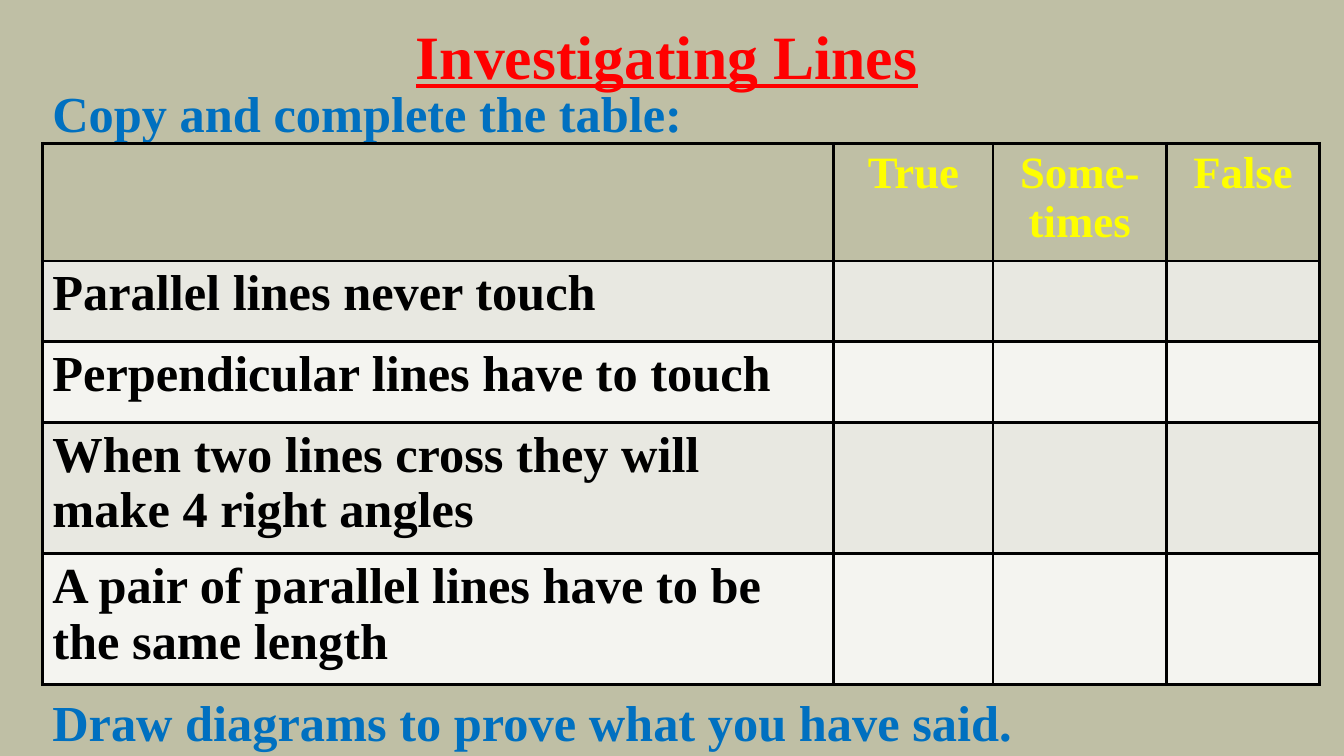
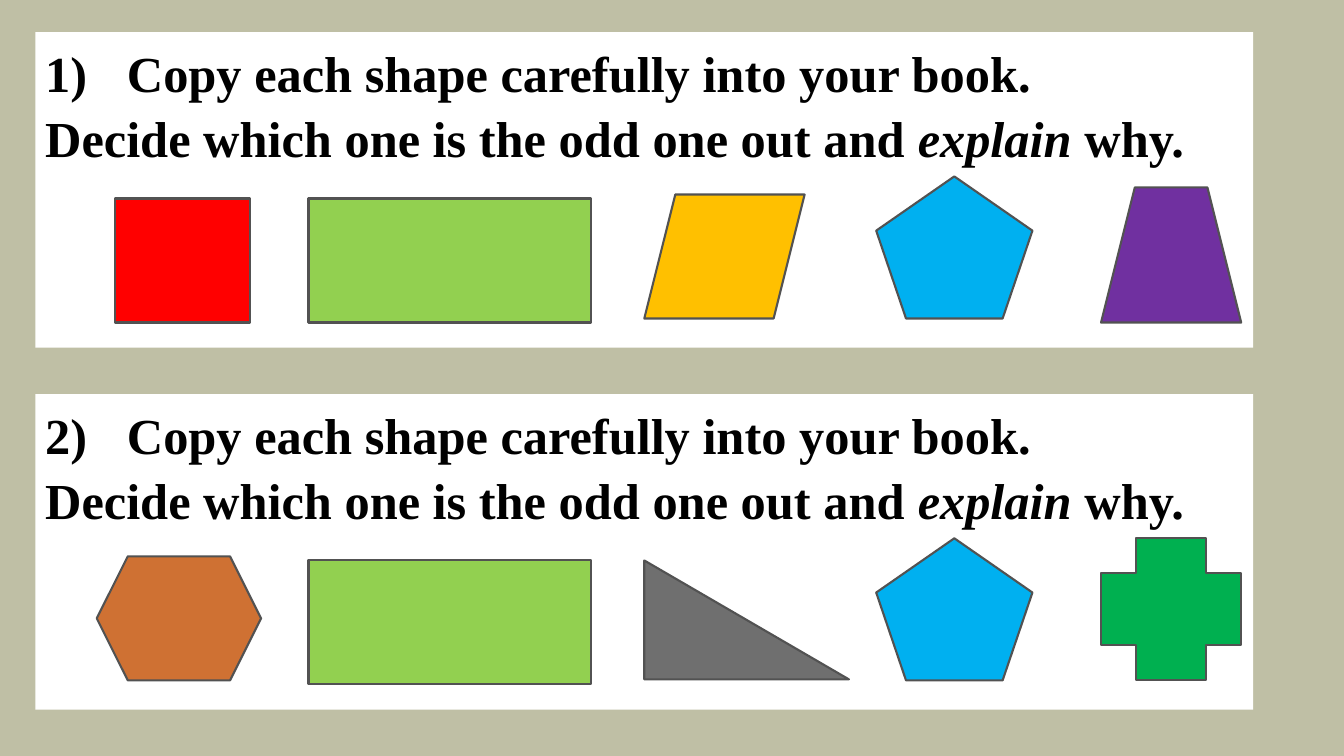
from dataclasses import dataclass
from typing import Any

import pptx
import pptx.dml.color
import pptx.enum.shapes
import pptx.enum.text
import pptx.oxml.ns
import pptx.oxml.xmlchemy
import pptx.util
from lxml import etree

Inches = pptx.util.Inches
Pt = pptx.util.Pt
Shape = pptx.enum.shapes.MSO_SHAPE
Align = pptx.enum.text.PP_ALIGN
qn = pptx.oxml.ns.qn


def rgb(value: str) -> pptx.dml.color.RGBColor:
    return pptx.dml.color.RGBColor.from_string(value)


# Shared colours and type sizes
@dataclass(frozen=True)
class Theme:
    font: str = "Times New Roman"
    background: str = "BFBFA5"
    title: str = "FF0000"
    instruction: str = "0070C0"
    heading: str = "FFFF00"
    text: str = "000000"
    panel: str = "FFFFFF"
    outline: str = "525252"
    grid: str = "000000"
    row_fills: tuple[str, str] = ("E8E8E1", "F4F4F0")
    title_size: int = 44
    body_size: int = 36
    heading_size: int = 32
    outline_width: float = 1.5
    grid_width: float = 2.25
    line_spacing: float = 1.08


THEME = Theme()


@dataclass(frozen=True)
class Box:
    left: float
    top: float
    width: float
    height: float

    def lengths(self) -> list[pptx.util.Length]:
        return [Inches(v) for v in (self.left, self.top, self.width, self.height)]


@dataclass(frozen=True)
class Figure:
    kind: Any
    box: Box  # top is measured from the top of its panel
    fill: str


@dataclass(frozen=True)
class Question:
    number: int
    top: float
    figures: tuple[Figure, ...]


# Slide 1 content
COLUMNS = (7.85, 1.58, 1.72, 1.52)
ROWS = (1.17, 0.8, 0.8, 1.3, 1.3)
HEADINGS = ("", "True", "Some-times", "False")
STATEMENTS = (
    "Parallel lines never touch",
    "Perpendicular lines have to touch",
    "When two lines cross they will make 4 right angles",
    "A pair of parallel lines have to be the same length",
)

# Slide 2 content
RECTANGLE = Figure(Shape.RECTANGLE, Box(3.06, 1.65, 2.8, 1.23), "92D050")
PENTAGON = Figure(Shape.REGULAR_PENTAGON, Box(8.69, 1.43, 1.55, 1.41), "00B0F0")
QUESTIONS = (
    Question(1, 0.32, (
        Figure(Shape.RECTANGLE, Box(1.14, 1.65, 1.34, 1.23), "FF0000"),
        RECTANGLE,
        Figure(Shape.PARALLELOGRAM, Box(6.39, 1.61, 1.59, 1.23), "FFC000"),
        PENTAGON,
        Figure(Shape.TRAPEZOID, Box(10.92, 1.54, 1.39, 1.34), "7030A0"),
    )),
    Question(2, 3.91, (
        Figure(Shape.HEXAGON, Box(0.96, 1.61, 1.63, 1.23), "CF7133"),
        RECTANGLE,
        Figure(Shape.RIGHT_TRIANGLE, Box(6.39, 1.65, 2.03, 1.18), "6F6F6F"),
        PENTAGON,
        Figure(Shape.CROSS, Box(10.92, 1.43, 1.39, 1.41), "00B050"),
    )),
)


def add_run(p: Any, text: str, size: int, color: str, **extra: bool) -> None:
    r = p.add_run()
    r.text = text
    formats = {"name": THEME.font, "size": Pt(size), "bold": True, **extra}
    for name, value in formats.items():
        setattr(r.font, name, value)
    r.font.color.rgb = rgb(color)


def add_text(s: Any, box: Box, text: str, size: int, color: str,
             align: Any = Align.LEFT, **extra: bool) -> None:
    tf = s.shapes.add_textbox(*box.lengths()).text_frame
    tf.word_wrap = True
    p = tf.paragraphs[0]
    p.alignment = align
    p.line_spacing = THEME.line_spacing
    add_run(p, text, size, color, **extra)


def add_borders(cell: Any) -> None:
    tc_pr = cell._tc.get_or_add_tcPr()
    for i, side in enumerate(("lnL", "lnR", "lnT", "lnB")):
        ln = etree.Element(qn(f"a:{side}"), w=str(Pt(THEME.grid_width)))
        fill = etree.SubElement(ln, qn("a:solidFill"))
        etree.SubElement(fill, qn("a:srgbClr"), val=THEME.grid)
        tc_pr.insert(i, ln)


def add_true_false_table(s: Any) -> None:
    box = Box(0.42, 1.42, sum(COLUMNS), sum(ROWS))
    table = s.shapes.add_table(len(ROWS), len(COLUMNS), *box.lengths()).table
    table.first_row = table.horz_banding = False
    for column, width in zip(table.columns, COLUMNS):
        column.width = Inches(width)
    for row, height in zip(table.rows, ROWS):
        row.height = Inches(height)

    blanks = ("",) * (len(COLUMNS) - 1)
    contents = (HEADINGS, *((text, *blanks) for text in STATEMENTS))
    for i, texts in enumerate(contents):
        header = i == 0
        for j, text in enumerate(texts):
            cell = table.cell(i, j)
            cell.fill.solid()
            cell.fill.fore_color.rgb = rgb(
                THEME.background if header else THEME.row_fills[(i - 1) % 2])
            add_borders(cell)
            if text:
                p = cell.text_frame.paragraphs[0]
                p.alignment = Align.CENTER if header else Align.LEFT
                add_run(p, text,
                        THEME.heading_size if header else THEME.body_size,
                        THEME.heading if header else THEME.text)


def add_filled(s: Any, kind: Any, box: Box, fill: str, outlined: bool = True) -> Any:
    sp = s.shapes.add_shape(kind, *box.lengths())
    sp.shadow.inherit = False
    sp.fill.solid()
    sp.fill.fore_color.rgb = rgb(fill)
    if outlined:
        sp.line.color.rgb = rgb(THEME.outline)
        sp.line.width = Pt(THEME.outline_width)
    else:
        sp.line.fill.background()
    return sp


def number_paragraph(p: Any, start: int) -> None:
    p_pr = p._p.get_or_add_pPr()
    p_pr.set("marL", str(Inches(0.81)))
    p_pr.set("indent", str(Inches(-0.81)))
    etree.SubElement(p_pr, qn("a:buFont"), typeface=THEME.font)
    etree.SubElement(p_pr, qn("a:buAutoNum"), type="arabicParenR", startAt=str(start))


def add_question(s: Any, question: Question) -> None:
    # Panel with the numbered instruction
    sp = add_filled(s, Shape.RECTANGLE, Box(0.35, question.top, 12.08, 3.13),
                    THEME.panel, outlined=False)
    tf = sp.text_frame
    tf.word_wrap = True
    tf.vertical_anchor = pptx.enum.text.MSO_ANCHOR.TOP
    lines = (
        (("Copy each shape carefully into your book.", False),),
        (("Decide which one is the odd one out and ", False),
         ("explain ", True), ("why.", False)),
    )
    for i, runs in enumerate(lines):
        p = tf.add_paragraph() if i else tf.paragraphs[0]
        p.alignment = Align.LEFT
        p.line_spacing = THEME.line_spacing
        for text, italic in runs:
            add_run(p, text, THEME.body_size, THEME.text, italic=italic)
    number_paragraph(tf.paragraphs[0], question.number)

    # Row of figures
    for figure in question.figures:
        b = figure.box
        add_filled(s, figure.kind,
                   Box(b.left, question.top + b.top, b.width, b.height), figure.fill)


def main() -> None:
    prs = pptx.Presentation()
    prs.slide_width, prs.slide_height = Inches(13.33), Inches(7.5)
    background = prs.slide_master.background.fill
    background.solid()
    background.fore_color.rgb = rgb(THEME.background)
    blank = prs.slide_layouts[6]

    # Slide 1: true, sometimes or false
    s = prs.slides.add_slide(blank)
    add_text(s, Box(1.08, 0.07, 11.07, 0.84), "Investigating Lines",
             THEME.title_size, THEME.title, Align.CENTER, underline=True)
    for top, text in ((0.72, "Copy and complete the table:"),
                      (6.76, "Draw diagrams to prove what you have said.")):
        add_text(s, Box(0.42, top, 12.21, 0.71), text,
                 THEME.body_size, THEME.instruction)
    add_true_false_table(s)

    # Slide 2: odd one out
    s = prs.slides.add_slide(blank)
    for question in QUESTIONS:
        add_question(s, question)

    prs.save("out.pptx")


if __name__ == "__main__":
    main()
